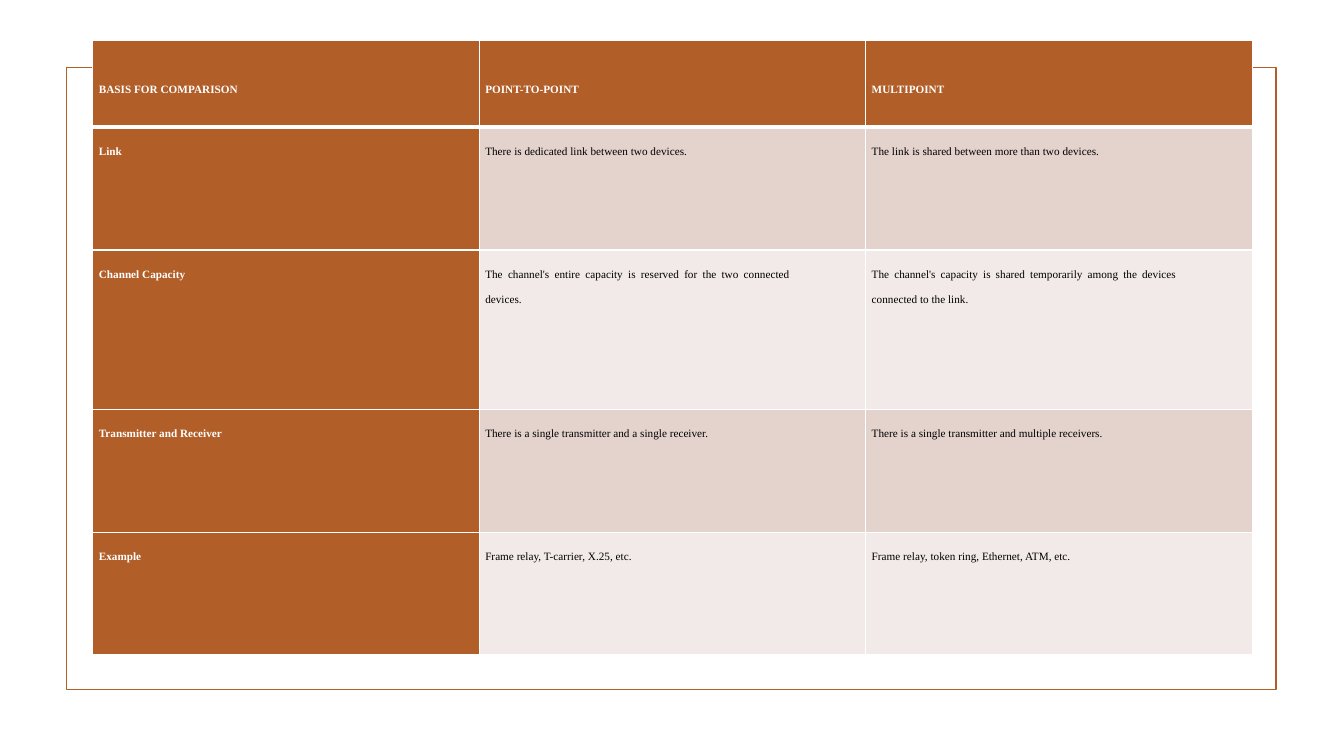
import pptx
import pptx.dml.color
import pptx.enum.shapes
import pptx.enum.text
import pptx.oxml
import pptx.oxml.ns
import pptx.util
from pptx.util import Inches

RUST = pptx.dml.color.RGBColor(0xB1, 0x5E, 0x28)
ROSE = pptx.dml.color.RGBColor(0xE4, 0xD2, 0xCD)
PALE = pptx.dml.color.RGBColor(0xF2, 0xEA, 0xE8)
WHITE = pptx.dml.color.RGBColor(0xFF, 0xFF, 0xFF)
BLACK = pptx.dml.color.RGBColor(0, 0, 0)

FONT = "Times New Roman"
ROW_HEIGHTS = [0.86, 1.22, 1.58, 1.22, 1.22]
COMPARISON = [
    ["BASIS FOR COMPARISON", "POINT-TO-POINT", "MULTIPOINT"],
    ["Link",
     "There is dedicated link between two devices.",
     "The link is shared between more than two devices."],
    ["Channel Capacity",
     "The channel's entire capacity is reserved for the two connected devices.",
     "The channel's capacity is shared temporarily among the devices connected to the link."],
    ["Transmitter and Receiver",
     "There is a single transmitter and a single receiver.",
     "There is a single transmitter and multiple receivers."],
    ["Example",
     "Frame relay, T-carrier, X.25, etc.",
     "Frame relay, token ring, Ethernet, ATM, etc."],
]


def add_frame(s):
    sp = s.shapes.add_shape(pptx.enum.shapes.MSO_SHAPE.RECTANGLE,
                            Inches(0.66), Inches(0.67), Inches(12), Inches(6.17))
    sp.shadow.inherit = False
    sp.fill.background()
    sp.line.color.rgb = RUST
    sp.line.width = pptx.util.Pt(1.25)


def set_borders(cell, top, bottom):
    tcPr = cell._tc.get_or_add_tcPr()
    widths = {"lnL": 1, "lnR": 1, "lnT": top, "lnB": bottom}
    for i, (tag, width) in enumerate(widths.items()):
        tcPr.insert(i, pptx.oxml.parse_xml(
            f'<a:{tag} {pptx.oxml.ns.nsdecls("a")} w="{pptx.util.Pt(width)}">'
            f'<a:solidFill><a:srgbClr val="{WHITE}"/></a:solidFill></a:{tag}>'))


def fill_cell(cell, text, fill, color, bold):
    cell.fill.solid()
    cell.fill.fore_color.rgb = fill
    cell.margin_left = cell.margin_right = Inches(0.06)
    cell.margin_top = cell.margin_bottom = Inches(0.06)
    cell.text_frame.text = text
    p = cell.text_frame.paragraphs[0]
    p.alignment = pptx.enum.text.PP_ALIGN.JUSTIFY
    p.line_spacing = 2.0
    p.space_after = pptx.util.Pt(12)
    p._p.get_or_add_pPr().set("marR", str(Inches(0.69)))
    font = p.runs[0].font
    font.name = FONT
    font.size = pptx.util.Pt(8)
    font.bold = bold
    font.color.rgb = color


def add_comparison(s):
    table = s.shapes.add_table(len(COMPARISON), 3, Inches(0.92), Inches(0.4),
                               Inches(11.5), Inches(sum(ROW_HEIGHTS))).table
    table.first_col = True
    for row, height in zip(table.rows, ROW_HEIGHTS):
        row.height = Inches(height)
    for i, texts in enumerate(COMPARISON):
        for j, text in enumerate(texts):
            cell = table.cell(i, j)
            heading = i == 0 or j == 0
            band = ROSE if i % 2 else PALE
            fill_cell(cell, text, RUST if heading else band,
                      WHITE if heading else BLACK, heading)
            set_borders(cell, 3 if i == 1 else 1, 3 if i == 0 else 1)
            if i == 0:
                cell.vertical_anchor = pptx.enum.text.MSO_ANCHOR.MIDDLE


def main():
    prs = pptx.Presentation()
    prs.slide_width = Inches(13.33)
    prs.slide_height = Inches(7.5)
    s = prs.slides.add_slide(prs.slide_layouts[6])
    add_frame(s)
    add_comparison(s)
    prs.save("out.pptx")


if __name__ == "__main__":
    main()
